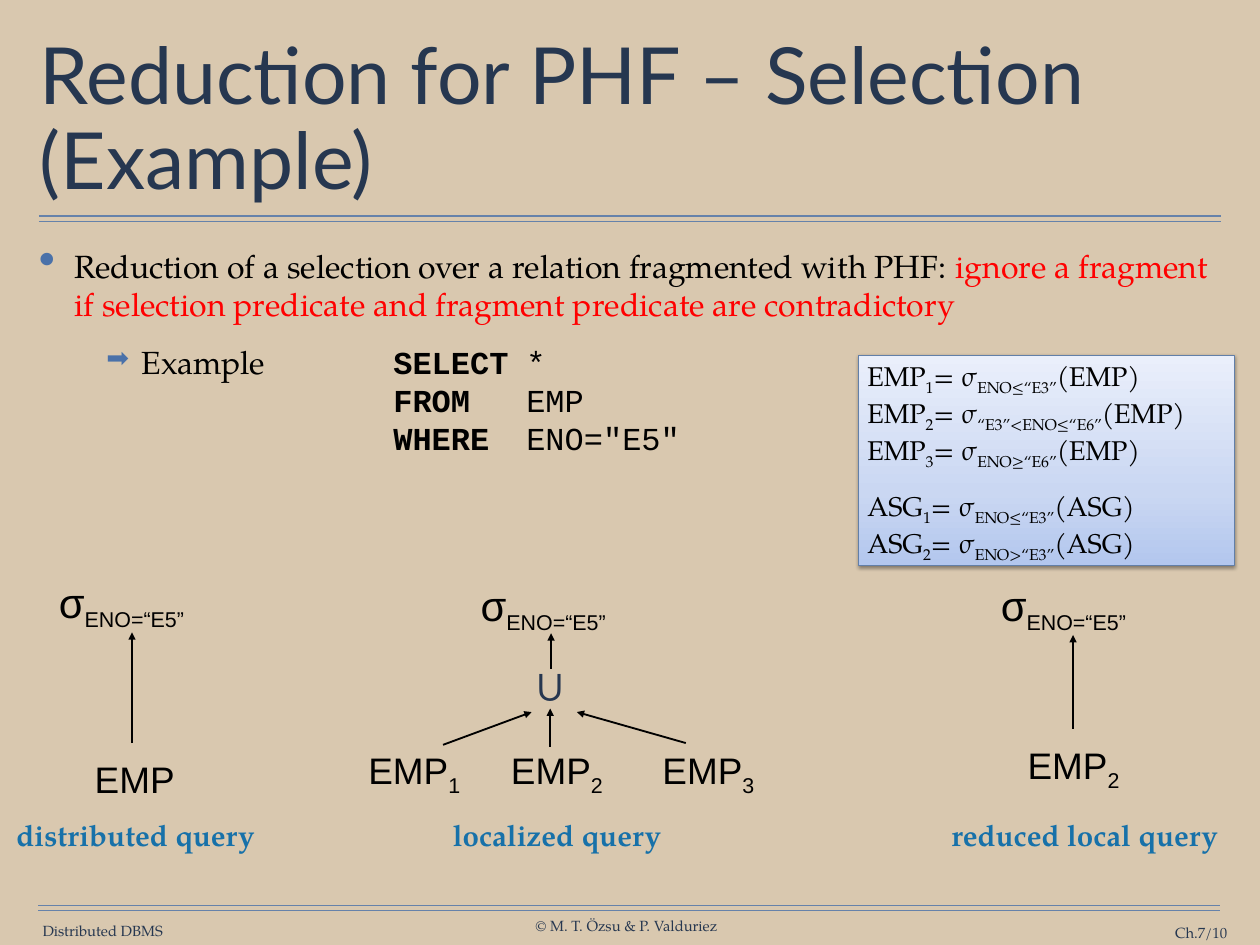
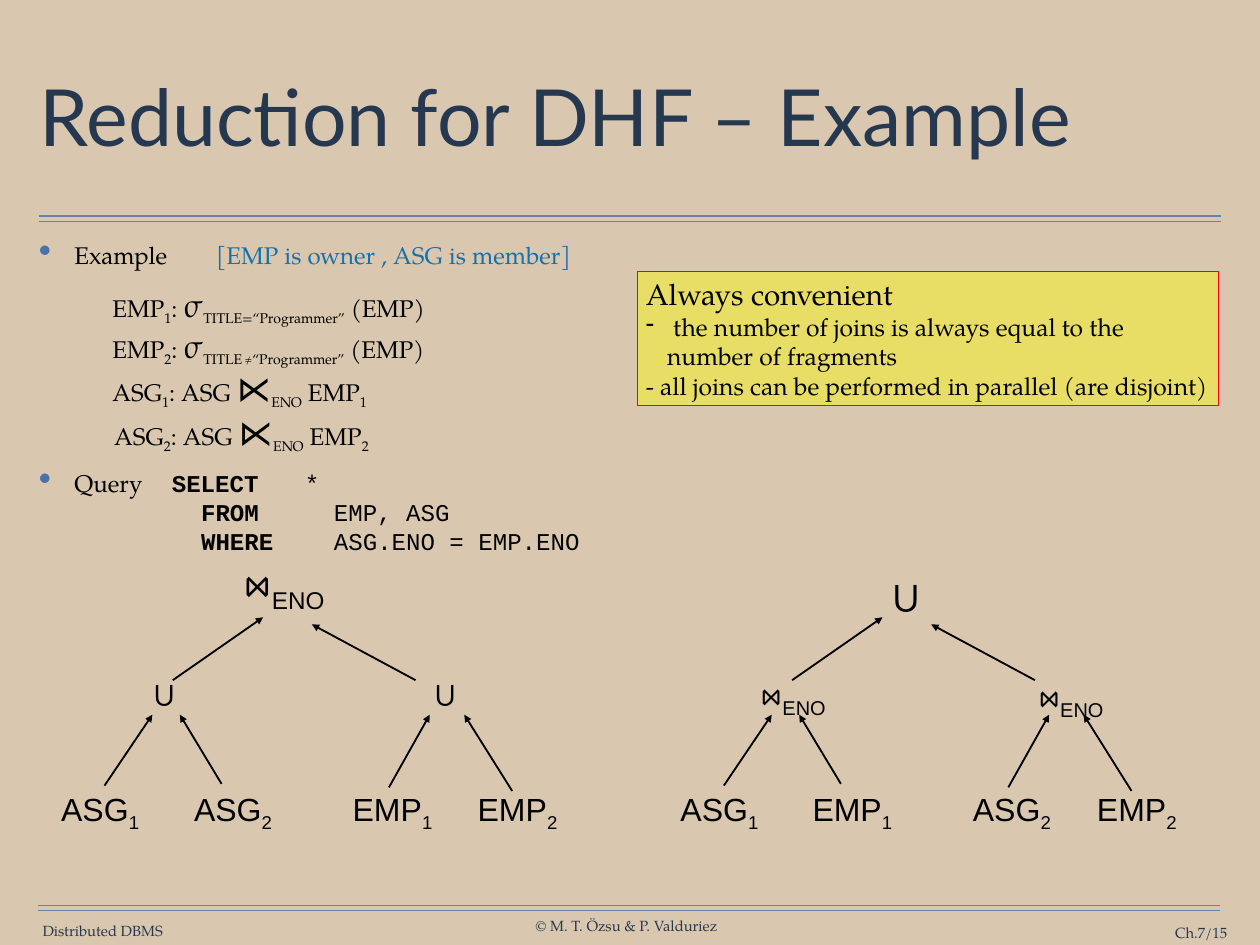
import copy
from dataclasses import dataclass
from typing import NamedTuple, Optional

import pptx
import pptx.dml.color
import pptx.enum.dml
import pptx.enum.shapes
import pptx.enum.text
import pptx.oxml.ns
import pptx.oxml.xmlchemy
import pptx.presentation
import pptx.slide
import pptx.text.text
import pptx.util
from lxml import etree
from pptx.dml.color import RGBColor
from pptx.enum.text import MSO_ANCHOR, MSO_AUTO_SIZE, PP_ALIGN
from pptx.oxml.ns import qn
from pptx.util import Inches, Pt

BACKGROUND = RGBColor(0xD9, 0xC8, 0xAF)
RULE_BLUE = RGBColor(0x66, 0x82, 0xAA)
NAVY = RGBColor(0x26, 0x37, 0x50)
BULLET_BLUE = RGBColor(0x4A, 0x71, 0xA9)
ACCENT_BLUE = RGBColor(0x17, 0x71, 0xA9)
PANEL_BORDER = RGBColor(0x62, 0x7F, 0xA8)
PANEL_STOPS = [(0, RGBColor(0xB3, 0xC7, 0xEE)), (0.35, RGBColor(0xCA, 0xD7, 0xF2)),
               (1, RGBColor(0xEA, 0xEF, 0xFB))]
BLACK = RGBColor(0, 0, 0)
RED = RGBColor(0xFF, 0, 0)
YELLOW = RGBColor(0xFF, 0xFF, 0)

SERIF = "TeX Gyre Pagella"
SANS = "Arial"
MONO = "Courier New"

Slide = pptx.slide.Slide
TREE_INSETS = (0.14, 0.07)
BODY_INSETS = (0.06, 0.06)
DEFAULT_INSETS = (0.1, 0.05)


class Box(NamedTuple):
    left: float
    top: float
    width: float
    height: float


class Style(NamedTuple):
    size: float
    font: str = SERIF
    color: RGBColor = BLACK
    bold: bool = False


class Span(NamedTuple):
    text: str
    style: Style
    subscript: bool = False


class Arrow(NamedTuple):
    start_x: float
    start_y: float
    end_x: float
    end_y: float


@dataclass
class Line:
    """One paragraph: its spans and its layout, lengths in inches, spacing in points."""
    spans: list[Span]
    alignment: PP_ALIGN = PP_ALIGN.LEFT
    level: int = 0
    margin: float = 0
    hanging: float = 0
    space_before: float = 0
    bullet: str = ""
    bullet_percent: int = 100
    bullet_color: RGBColor = BLACK
    tab: Optional[float] = None
    spacing: Optional[float] = None


def subscripted(text: str, style: Style, low: Optional[Style] = None) -> list[Span]:
    """Split at bars; every second piece is a subscript."""
    return [Span(piece, (low or style) if index % 2 else style, index % 2 == 1)
            for index, piece in enumerate(text.split("|")) if piece]


def bullet_line(spans: list[Span], **layout) -> Line:
    settings = dict(bullet="•", bullet_percent=150, bullet_color=BULLET_BLUE,
                    margin=0.4, hanging=0.4)
    return Line(spans, **{**settings, **layout})


def centred(spans: list[Span], **layout) -> list[Line]:
    return [Line(spans, PP_ALIGN.CENTER, **layout)]


def write_paragraph(paragraph: pptx.text.text._Paragraph, line: Line) -> None:
    properties = paragraph._p.get_or_add_pPr()
    properties.set("marL", str(Inches(line.margin)))
    properties.set("indent", str(-Inches(line.hanging)))
    if line.bullet:
        color = etree.SubElement(properties, qn("a:buClr"))
        etree.SubElement(color, qn("a:srgbClr"), val=str(line.bullet_color))
        etree.SubElement(properties, qn("a:buSzPct"), val=str(line.bullet_percent * 1000))
        etree.SubElement(properties, qn("a:buChar"), char=line.bullet)
    if line.tab is not None:
        tabs = etree.SubElement(properties, qn("a:tabLst"))
        etree.SubElement(tabs, qn("a:tab"), pos=str(Inches(line.tab)), algn="l")
    paragraph.alignment = line.alignment
    paragraph.level = line.level
    paragraph.space_before = Pt(line.space_before)
    if line.spacing is not None:
        paragraph.line_spacing = line.spacing
    for span in line.spans:
        for index, piece in enumerate(span.text.split("\n")):
            if index:
                paragraph.add_line_break()
            if not piece:
                continue
            run = paragraph.add_run()
            run.text = piece
            run.font.size = Pt(span.style.size)
            run.font.name = span.style.font
            run.font.bold = span.style.bold
            run.font.color.rgb = span.style.color
            if span.subscript:
                run._r.get_or_add_rPr().set("baseline", "-25000")


def fill_frame(frame: pptx.text.text.TextFrame, lines: list[Line],
               insets: tuple[float, float] = DEFAULT_INSETS, wrap: bool = True,
               anchor: MSO_ANCHOR = MSO_ANCHOR.TOP, grow: bool = False) -> None:
    frame.margin_left = frame.margin_right = Inches(insets[0])
    frame.margin_top = frame.margin_bottom = Inches(insets[1])
    frame.word_wrap = wrap
    frame.vertical_anchor = anchor
    frame.auto_size = MSO_AUTO_SIZE.SHAPE_TO_FIT_TEXT if grow else MSO_AUTO_SIZE.NONE
    for index, line in enumerate(lines):
        write_paragraph(frame.add_paragraph() if index else frame.paragraphs[0], line)


def add_text(slide: Slide, box: Box, lines: list[Line], **options) -> None:
    shape = slide.shapes.add_textbox(*map(Inches, box))
    fill_frame(shape.text_frame, lines, **options)


def add_label(slide: Slide, box: Box, spans: list[Span], wrap: bool = False) -> None:
    add_text(slide, box, centred(spans), insets=TREE_INSETS, wrap=wrap, grow=True)


def add_line(slide: Slide, ends: Arrow, color: RGBColor = BLACK, width: float = 1.5,
             arrowhead: bool = True) -> None:
    connector = slide.shapes.add_connector(
        pptx.enum.shapes.MSO_CONNECTOR.STRAIGHT, *map(Inches, ends))
    connector.line.color.rgb = color
    connector.line.width = Pt(width)
    if arrowhead:
        etree.SubElement(connector.line._get_or_add_ln(), qn("a:tailEnd"), type="triangle")
    etree.SubElement(connector._element.spPr, qn("a:effectLst"))


def add_panel(slide: Slide, box: Box, border: RGBColor):
    shape = slide.shapes.add_shape(
        pptx.enum.shapes.MSO_SHAPE.RECTANGLE, *map(Inches, box))
    shape.shadow.inherit = False
    shape.line.color.rgb = border
    shape.line.width = Pt(0.75)
    return shape


def add_base_slide(presentation: pptx.presentation.Presentation, title: str,
                   page: str) -> Slide:
    """Blank slide with background, double rules, footers and title."""
    slide = presentation.slides.add_slide(presentation.slide_layouts[6])
    slide.background.fill.solid()
    slide.background.fill.fore_color.rgb = BACKGROUND
    for left, top in ((0.44, 2.44), (0.43, 10.22)):
        for y in (top, top + 0.06):
            add_line(slide, Arrow(left, y, left + 13.34, y), RULE_BLUE, 1, False)
    footers = [(Box(0.47, 10.41, 1.38, 0.2), "Distributed DBMS", PP_ALIGN.CENTER),
               (Box(6.03, 10.35, 2.08, 0.2), "© M. T. Özsu & P. Valduriez", PP_ALIGN.CENTER),
               (Box(12.31, 10.43, 1.54, 0.2), page, PP_ALIGN.RIGHT)]
    for box, text, alignment in footers:
        add_text(slide, box, [Line([Span(text, Style(12, color=NAVY))], alignment)],
                 insets=(0, 0), wrap=alignment == PP_ALIGN.RIGHT,
                 anchor=MSO_ANCHOR.MIDDLE, grow=True)
    add_text(slide, Box(0.39, 0.49, 13.44, 1.76),
             [Line([Span(title, Style(64, "Lato", NAVY))], spacing=0.9)],
             insets=BODY_INSETS, anchor=MSO_ANCHOR.MIDDLE)
    return slide


def add_fragment_panel(slide: Slide) -> None:
    panel = add_panel(slide, Box(9.69, 4.01, 4.24, 2.37), PANEL_BORDER)
    panel.fill.gradient()
    panel.fill.gradient_angle = 90
    stop_list = panel._element.spPr.find(".//" + qn("a:gsLst"))
    stop_list.insert(1, copy.deepcopy(stop_list[0]))
    for stop, (position, color) in zip(panel.fill.gradient_stops, PANEL_STOPS):
        stop.position = position
        stop.color.rgb = color
    effects = panel._element.spPr.find(qn("a:effectLst"))
    shadow = etree.SubElement(effects, qn("a:outerShdw"), blurRad=str(Pt(3.1)),
                              dist=str(Pt(1.6)), dir="5400000", rotWithShape="0")
    shade = etree.SubElement(shadow, qn("a:srgbClr"), val="000000")
    etree.SubElement(shade, qn("a:alpha"), val="38000")
    style = Style(22)
    fragments = ["EMP|1|= σ|ENO≤“E3”|(EMP)\nEMP|2|= σ|“E3”<ENO≤“E6”|(EMP)\n"
                 "EMP|3|= σ|ENO≥“E6”|(EMP)",
                 "ASG|1|= σ|ENO≤“E3”|(ASG)\nASG|2|= σ|ENO>“E3”|(ASG)"]
    fill_frame(panel.text_frame, [Line(subscripted(text, style), space_before=16 * index)
                                  for index, text in enumerate(fragments)])


def build_selection_slide(presentation: pptx.presentation.Presentation) -> None:
    slide = add_base_slide(presentation, "Reduction for PHF – Selection (Example)", "Ch.7/10")
    body = Style(26)
    code = body._replace(font=MONO)
    keyword = code._replace(bold=True)
    add_text(slide, Box(0.38, 2.72, 13.44, 7.4), [
        bullet_line([
            Span("Reduction of a selection over a relation fragmented with PHF: ", body),
            Span("ignore a fragment if selection predicate and fragment predicate "
                 "are contradictory", body._replace(color=RED))], tab=3.56),
        bullet_line([
            Span("Example \t\t", body), Span("SELECT\t", keyword), Span("*\n\t\t", code),
            Span("FROM\t", keyword), Span("\tEMP\n\t\t", code),
            Span("WHERE", keyword), Span("\tENO=\"E5\"", code)],
            bullet="➡", bullet_percent=85, level=1, margin=1.16, space_before=15.6, tab=3.56),
    ], insets=BODY_INSETS)
    add_fragment_panel(slide)

    node = Style(30, SANS)
    for left, top in ((0.47, 6.44), (5.23, 6.47), (11.1, 6.47)):
        add_label(slide, Box(left, top, 1.87, 0.71),
                  subscripted("σ|ENO=“E5” ", node._replace(size=34), node))
    add_label(slide, Box(0.92, 8.47, 1.2, 0.64), [Span("EMP", node)])
    for left, top, number in ((4, 8.37, 1), (5.61, 8.37, 2), (7.32, 8.37, 3), (11.44, 8.31, 2)):
        add_label(slide, Box(left, top, 1.35, 0.64), subscripted(f"EMP|{number}", node))
    add_text(slide, Box(6.02, 7.45, 0.39, 0.58),
             centred([Span("∪", Style(36, SANS, NAVY))], spacing=Pt(41.2)),
             insets=(0, 0), wrap=False, grow=True)
    for arrow in (Arrow(1.49, 8.39, 1.49, 7.14), Arrow(6.22, 7.55, 6.22, 7.15),
                  Arrow(5, 8.41, 6, 8.04), Arrow(6.21, 8.43, 6.21, 8),
                  Arrow(7.74, 8.39, 6.51, 8.04), Arrow(12.11, 8.23, 12.11, 7.17)):
        add_line(slide, arrow)
    for left, width, caption in ((0.08, 2.9, "distributed query"), (5, 2.57, "localized query"),
                                 (10.57, 3.34, "reduced local query")):
        add_text(slide, Box(left, 9.17, width, 0.5),
                 centred([Span(caption, Style(24, color=ACCENT_BLUE, bold=True))]),
                 wrap=False, grow=True)


def add_tree_branches(slide: Slide, left: float, leaves: list[str]) -> None:
    """Four leaves and the six arrows of a two-level tree, shifted right by left."""
    for x, name in zip((0.53, 2.03, 3.83, 5.24), leaves):
        add_label(slide, Box(left + x, 8.85, 1.2, 0.58), subscripted(name, Style(26, SANS)))
    for start_x, start_y, end_x, end_y in (
            (1.18, 8.87, 1.72, 8.07), (2.5, 8.85, 2.03, 8.07), (4.39, 8.89, 4.85, 8.07),
            (5.78, 8.93, 5.24, 8.07), (4.69, 7.68, 3.52, 7.05), (1.95, 7.68, 2.97, 6.97)):
        add_line(slide, Arrow(left + start_x, start_y, left + end_x, end_y))


def build_derived_slide(presentation: pptx.presentation.Presentation) -> None:
    slide = add_base_slide(presentation, "Reduction for DHF – Example", "Ch.7/15")
    body = Style(19.6)
    sigma = Span("σ", body._replace(size=26.6))
    semijoin = Span("⋉", Style(28, "Noto Sans CJK JP"))
    code = body._replace(font=MONO)
    keyword = code._replace(bold=True)
    nested = dict(level=1, margin=0.83, hanging=0.4)

    def join_spans(prefix: str, number: int) -> list[Span]:
        return [*subscripted(f"{prefix}ASG|{number}|: ASG ", body), semijoin,
                *subscripted(f"|ENO| EMP|{number}", body)]

    add_text(slide, Box(0.38, 2.66, 13.44, 2.99), [
        bullet_line([Span("Example\t\t", body),
                     Span("[EMP is owner , ASG is member]", body._replace(color=ACCENT_BLUE))]),
        Line([*subscripted("\tEMP|1|: ", body), sigma,
              *subscripted("|TITLE=“Programmer”| (EMP)", body)], space_before=12, **nested),
        Line([*subscripted("\tEMP|2|: ", body), sigma, Span("TITLE", body, True),
              Span(" ≠", body._replace(size=14), True),
              *subscripted("|“Programmer”| (EMP)", body)], **nested),
        Line(join_spans("\t", 1), **nested),
        Line(join_spans("", 2), level=1, margin=1.25, hanging=0.4),
        bullet_line([Span("Query\t", body), Span("SELECT ", keyword), Span("\t*", code)],
                    space_before=12),
        Line([Span("\t\t\tFROM\t", keyword), Span("\tEMP, ASG", code)], **nested),
        Line([Span("\t\t\tWHERE\t\t", keyword), Span("ASG.ENO = EMP.ENO", code)], **nested),
    ], insets=BODY_INSETS)

    add_tree_branches(slide, 0, ["ASG|1", "ASG|2", "EMP|1", "EMP|2"])
    add_tree_branches(slide, 6.99, ["ASG|1", "EMP|1", "ASG|2", "EMP|2"])
    for left in (1.56, 4.73):
        add_label(slide, Box(left, 7.52, 0.59, 0.61), [Span("∪", Style(28, SANS))])
    for box, name in ((Box(8.36, 7.52, 1.18, 0.61), "ENO"), (Box(11.49, 7.54, 1.25, 0.61), "ENO ")):
        add_label(slide, box, subscripted(f"⋈|{name}", Style(28), Style(28, SANS)))
    add_label(slide, Box(2.42, 6.19, 1.57, 0.75),
              subscripted("⋈|ENO", Style(36), Style(34, SANS)), wrap=True)
    add_label(slide, Box(9.45, 6.35, 1.57, 0.75), [Span("∪", Style(36, SANS))], wrap=True)

    note = add_panel(slide, Box(7.19, 3.07, 6.56, 1.51), RED)
    note.fill.solid()
    note.fill.fore_color.rgb = YELLOW
    fill_color = note._element.spPr.find(qn("a:solidFill")).find(qn("a:srgbClr"))
    etree.SubElement(fill_color, qn("a:alpha"), val="41000")
    point = Style(20)
    fill_frame(note.text_frame, [
        Line([Span("Always convenient", Style(24))]),
        Line([Span(" the number of joins is always equal to the number of fragments", point)],
             bullet="-", margin=0.24, hanging=0.24),
        Line([Span("- all joins can be performed in parallel (are disjoint)", point)]),
    ], grow=True)


def main() -> None:
    presentation = pptx.Presentation()
    presentation.slide_width = Inches(14.22)
    presentation.slide_height = Inches(10.67)
    build_selection_slide(presentation)
    build_derived_slide(presentation)
    presentation.save("out.pptx")


if __name__ == "__main__":
    main()
